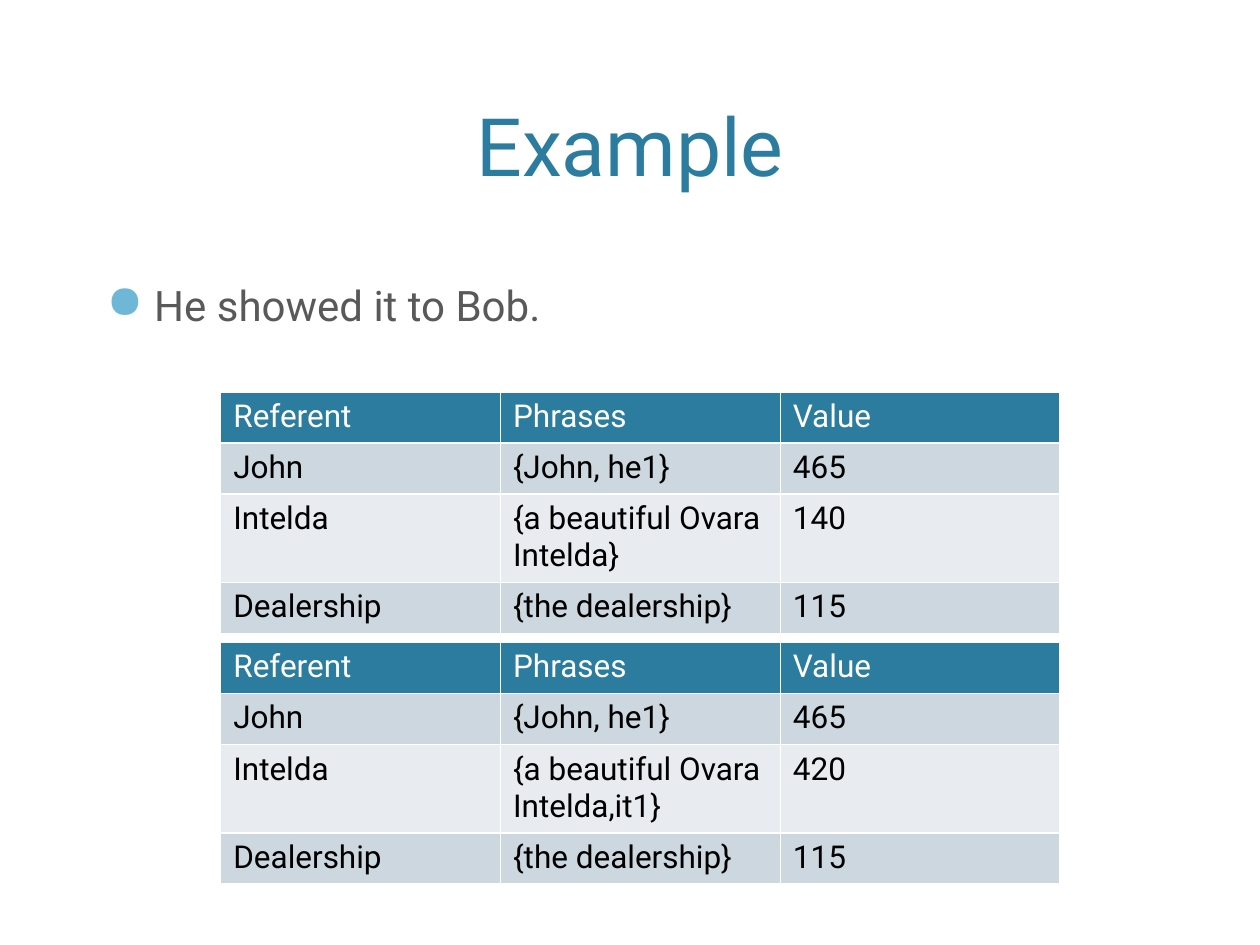
from lxml import etree
from pptx import Presentation
from pptx.dml.color import RGBColor
from pptx.enum import text
from pptx.oxml import ns
from pptx.util import Cm, Pt

TITLE = "Example"
POINT = "He showed it to Bob."
HEAD = ("Referent", "Phrases", "Value")
# top of each table in cm, then its rows
TABLES = [
    (7.9, [
        ("John", "{John, he1}", "465"),
        ("Intelda", "{a beautiful Ovara Intelda}", "140"),
        ("Dealership", "{the dealership}", "115"),
    ]),
    (12.95, [
        ("John", "{John, he1}", "465"),
        ("Intelda", "{a beautiful Ovara Intelda,it1}", "420"),
        ("Dealership", "{the dealership}", "115"),
    ]),
]

FONT = "Roboto"
COLORS = {
    "head": "2C7C9F", "dot": "6FB7D7", "body": "595959", "ink": "000000",
    "line": "FFFFFF", "odd": "CDD7DF", "even": "E8ECF0",
}
LEFT, COL = 4.45, 5.64
LOW, TALL = 1.03, 1.76  # heights of one-line and two-line rows
WRAP = 20  # longest phrase that fits on one line


def color(name):
    return RGBColor.from_string(COLORS[name])


def write(frame, words, size, hue):
    frame.text = words
    para = frame.paragraphs[0]
    font = para.runs[0].font
    font.name, font.size = FONT, Pt(size)
    font.color.rgb = color(hue)
    return para


def add_box(slide, place, words, size, hue):
    frame = slide.shapes.add_textbox(*map(Cm, place)).text_frame
    frame.word_wrap = True
    return frame, write(frame, words, size, hue)


def add_dot(para):
    props = para._p.get_or_add_pPr()
    props.set("marL", str(Cm(0.96)))
    props.set("indent", str(-Cm(0.96)))
    tint = etree.SubElement(props, ns.qn("a:buClr"))
    etree.SubElement(tint, ns.qn("a:srgbClr"), val=COLORS["dot"])
    etree.SubElement(props, ns.qn("a:buSzPct"), val="110000")
    etree.SubElement(props, ns.qn("a:buChar"), char="●")


def add_edges(cell):
    props = cell._tc.get_or_add_tcPr()
    for side in "LRTB":
        edge = etree.SubElement(props, ns.qn("a:ln" + side), w=str(Pt(1)))
        fill = etree.SubElement(edge, ns.qn("a:solidFill"))
        etree.SubElement(fill, ns.qn("a:srgbClr"), val=COLORS["line"])


def add_grid(slide, top, rows):
    rows = [HEAD] + rows
    highs = [TALL if max(map(len, row)) > WRAP else LOW for row in rows]
    place = (LEFT, top, COL * len(HEAD), sum(highs))
    grid = slide.shapes.add_table(len(rows), len(HEAD), *map(Cm, place)).table
    for col in grid.columns:
        col.width = Cm(COL)
    for r, row in enumerate(rows):
        grid.rows[r].height = Cm(highs[r])
        back = "head" if r == 0 else "odd" if r % 2 else "even"
        for c, words in enumerate(row):
            cell = grid.cell(r, c)
            add_edges(cell)
            cell.fill.solid()
            cell.fill.fore_color.rgb = color(back)
            write(cell.text_frame, words, 18, "ink" if r else "line")


def main():
    deck = Presentation()
    deck.slide_width, deck.slide_height = Cm(25.4), Cm(19.05)
    slide = deck.slides.add_slide(deck.slide_layouts[6])

    frame, para = add_box(slide, (1.52, 0.3, 22.36, 3.71), TITLE, 46, "head")
    frame.vertical_anchor = text.MSO_ANCHOR.BOTTOM
    para.alignment = text.PP_ALIGN.CENTER

    frame, para = add_box(slide, (1.9, 5.51, 21.6, 2.97), POINT, 24, "body")
    para.space_before = Pt(20)
    add_dot(para)

    for top, rows in TABLES:
        add_grid(slide, top, rows)
    deck.save("out.pptx")


if __name__ == "__main__":
    main()
